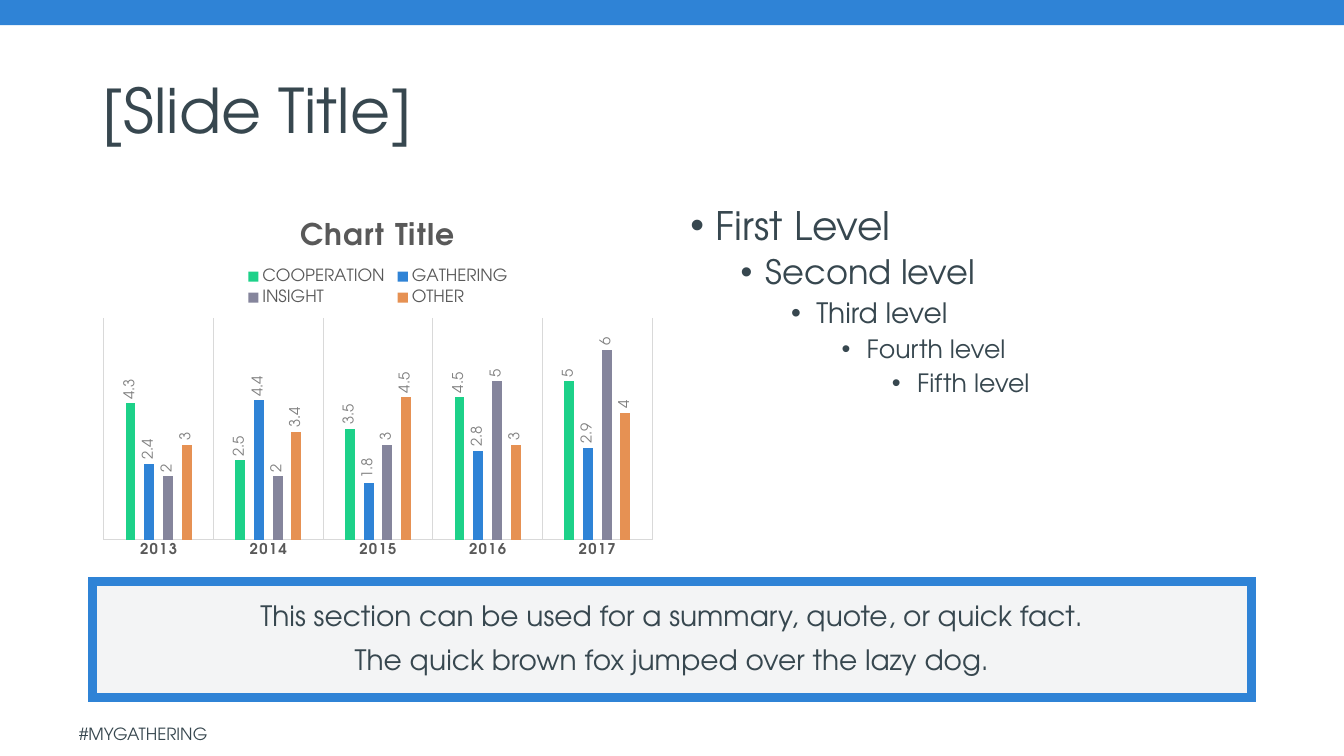
from dataclasses import dataclass

from lxml.etree import SubElement
from pptx import Presentation
from pptx.chart.data import CategoryChartData
from pptx.dml.color import RGBColor
from pptx.enum.chart import XL_CHART_TYPE as ChartType
from pptx.enum.chart import XL_LABEL_POSITION as LabelPosition
from pptx.enum.chart import XL_LEGEND_POSITION as LegendPosition
from pptx.enum.chart import XL_TICK_LABEL_POSITION as TickLabels
from pptx.enum.chart import XL_TICK_MARK as TickMark
from pptx.enum.shapes import MSO_SHAPE as Preset
from pptx.enum.text import MSO_ANCHOR as Anchor
from pptx.enum.text import PP_ALIGN as Align
from pptx.oxml import parse_xml
from pptx.oxml.ns import nsdecls, qn
from pptx.util import Inches, Pt

FONT = "TeX Gyre Adventor"
COLORS = {
    "blue": "2F83D6", "slate": "37474F", "panel": "F3F4F5", "green": "1DD189",
    "violet": "85859C", "orange": "E69153", "heading": "595959",
    "label": "808080", "rule": "D9D9D9", "black": "000000",
}
COLUMNS, ROWS = 160, 90
UNIT = Inches(1 / 12)


@dataclass(frozen=True)
class Area:
    column: float
    row: float
    columns: float
    rows: float

    def box(self) -> list[int]:
        return [round(n * UNIT) for n in (self.column, self.row, self.columns, self.rows)]


@dataclass(frozen=True)
class Line:
    text: str
    size: float
    before: float = 0
    level: int = -1
    spacing: float = 0.9
    align: Align = Align.LEFT


@dataclass(frozen=True)
class Series:
    name: str
    values: tuple[float, ...]
    color: str


STRIPE = Area(0, 0, COLUMNS, 3)
HASHTAG = Area(8.25, 85, 27, 4.8)
TITLE = Area(11, 4.8, 138, 17.4)
CHART = Area(11, 24, 68, 43.3)
BODY = Area(81, 24, 68, 43.3)
BANNER = Area(11, 69.25, 138, 13.8)

LEVELS = [
    Line(text, size, 5 if level else 10, level)
    for level, (text, size) in enumerate([
        ("First Level", 28), ("Second level", 24), ("Third level", 20),
        ("Fourth level", 18), ("Fifth level", 18),
    ])
]
SUMMARY = [
    Line(text, 20, 10, align=Align.CENTER)
    for text in (
        "This section can be used for a summary, quote, or quick fact.",
        "The quick brown fox jumped over the lazy dog.",
    )
]
YEARS = ("2013", "2014", "2015", "2016", "2017")
SERIES = [
    Series("COOPERATION", (4.3, 2.5, 3.5, 4.5, 5), "green"),
    Series("GATHERING", (2.4, 4.4, 1.8, 2.8, 2.9), "blue"),
    Series("INSIGHT", (2, 2, 3, 5, 6), "violet"),
    Series("OTHER", (3, 3.4, 4.5, 3, 4), "orange"),
]


def color(name: str) -> RGBColor:
    return RGBColor.from_string(COLORS[name])


def style_font(font, size: float, name: str, bold: bool = False) -> None:
    font.name = FONT
    font.size = Pt(size)
    font.bold = bold
    font.color.rgb = color(name)


def write(shape, lines: list[Line], anchor: Anchor) -> None:
    frame = shape.text_frame
    frame.word_wrap = True
    frame.vertical_anchor = anchor
    for index, line in enumerate(lines):
        paragraph = frame.add_paragraph() if index else frame.paragraphs[0]
        paragraph.alignment = line.align
        paragraph.line_spacing = line.spacing
        paragraph.space_before = Pt(line.before)
        if line.level >= 0:
            paragraph.level = line.level
            properties = paragraph._p.get_or_add_pPr()
            properties.set("marL", str(Inches(0.25 + 0.5 * line.level)))
            properties.set("indent", str(Inches(-0.25)))
            SubElement(properties, qn("a:buFont"), typeface="Arial")
            SubElement(properties, qn("a:buChar"), char="•")
        run = paragraph.add_run()
        run.text = line.text
        style_font(run.font, line.size, "slate")


def add_text(slide, area: Area, lines: list[Line], anchor: Anchor) -> None:
    write(slide.shapes.add_textbox(*area.box()), lines, anchor)


def add_panel(slide, area: Area, fill: str):
    shape = slide.shapes.add_shape(Preset.RECTANGLE, *area.box())
    shape.shadow.inherit = False
    shape.fill.solid()
    shape.fill.fore_color.rgb = color(fill)
    shape.line.fill.background()
    return shape


def layout(x: float, y: float, width: float, height: float, target: str = ""):
    inner = f'<c:layoutTarget val="{target}"/>' if target else ""
    return parse_xml(
        f'<c:layout {nsdecls("c")}><c:manualLayout>{inner}'
        '<c:xMode val="edge"/><c:yMode val="edge"/>'
        f'<c:x val="{x}"/><c:y val="{y}"/><c:w val="{width}"/><c:h val="{height}"/>'
        "</c:manualLayout></c:layout>"
    )


def place(element, new_layout, after: str) -> None:
    for old in element.findall(qn("c:layout")):
        element.remove(old)
    if after:
        element.find(qn(after)).addnext(new_layout)
    else:
        element.insert(0, new_layout)


def add_column_chart(slide) -> None:
    data = CategoryChartData()
    data.categories = YEARS
    for series in SERIES:
        data.add_series(series.name, series.values)
    chart = slide.shapes.add_chart(ChartType.COLUMN_CLUSTERED, *CHART.box(), data).chart
    style_font(chart.font, 10, "black")

    chart.has_title = True
    run = chart.chart_title.text_frame.paragraphs[0].add_run()
    run.text = "Chart Title"
    style_font(run.font, 21.3, "heading", True)
    run.font._element.set("spc", "100")

    chart.has_legend = True
    chart.legend.position = LegendPosition.TOP
    chart.legend.include_in_layout = False
    style_font(chart.legend.font, 12, "heading")
    place(chart.legend._element, layout(0.26, 0.17, 0.48, 0.13), "c:legendPos")

    years = chart.category_axis
    years.major_tick_mark = years.minor_tick_mark = TickMark.NONE
    years.has_major_gridlines = True
    for rule in (years.format.line, years.major_gridlines.format.line):
        rule.color.rgb = color("rule")
        rule.width = Pt(0.75)
    style_font(years.tick_labels.font, 10.6, "heading", True)
    years.tick_labels.font._element.set("spc", "100")

    values = chart.value_axis
    values.visible = False
    values.has_major_gridlines = False
    values.tick_label_position = TickLabels.NONE
    values.minimum_scale, values.maximum_scale = 0, 7

    plot = chart.plots[0]
    plot.vary_by_categories = False
    plot.gap_width, plot.overlap = 444, -90
    for bars, series in zip(plot.series, SERIES):
        bars.format.fill.solid()
        bars.format.fill.fore_color.rgb = color(series.color)
        labels = bars.data_labels
        labels.show_value = True
        labels.position = LabelPosition.OUTSIDE_END
        style_font(labels.font, 10.6, "label")
        body = labels._element.find(qn("c:txPr")).find(qn("a:bodyPr"))
        body.set("rot", "-5400000")
        body.set("vert", "horz")
    place(chart._chartSpace.chart.plotArea, layout(0.02, 0.32, 0.96, 0.61, "inner"), "")


def main() -> None:
    presentation = Presentation()
    presentation.slide_width = COLUMNS * UNIT
    presentation.slide_height = ROWS * UNIT
    slide = presentation.slides.add_slide(presentation.slide_layouts[6])

    add_panel(slide, STRIPE, "blue")
    add_text(slide, HASHTAG, [Line("#MYGATHERING", 12, spacing=1)], Anchor.MIDDLE)
    add_text(slide, TITLE, [Line("[Slide Title]", 44)], Anchor.MIDDLE)
    add_column_chart(slide)
    add_text(slide, BODY, LEVELS, Anchor.TOP)

    banner = add_panel(slide, BANNER, "panel")
    banner.line.color.rgb = color("blue")
    banner.line.width = Pt(6)
    SubElement(banner.line._get_or_add_ln(), qn("a:miter"), lim="800000")
    frame = banner.text_frame
    frame.margin_left = frame.margin_right = Inches(0.5)
    frame.margin_top = frame.margin_bottom = Inches(0.2)
    write(banner, SUMMARY, Anchor.MIDDLE)

    presentation.save("out.pptx")


if __name__ == "__main__":
    main()
